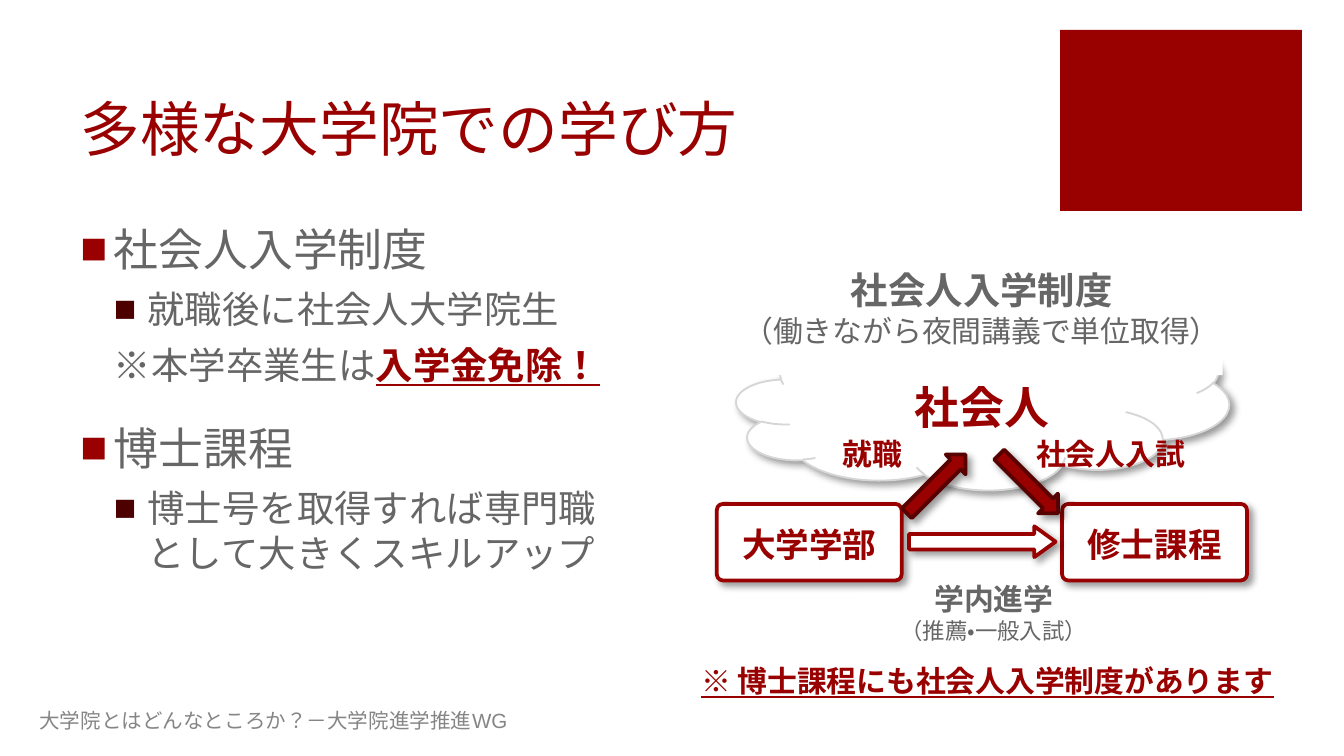
from lxml.etree import SubElement
from pptx import Presentation
from pptx.dml.color import RGBColor
from pptx.enum.lang import MSO_LANGUAGE_ID
from pptx.enum.shapes import MSO_SHAPE
from pptx.enum.text import MSO_ANCHOR, MSO_AUTO_SIZE, PP_ALIGN
from pptx.oxml import parse_xml
from pptx.oxml.ns import nsdecls, qn
from pptx.util import Pt

COLORS = {
    "red": "990000", "dark_red": "4C0000", "arrow_edge": "580101",
    "gray": "666666", "footer": "858585", "cloud_edge": "D6D6D6", "white": "FFFFFF",
}


def add_box(left, top, width, height, kind=None, fill=None, line=None, line_width=2,
            adjustments=(), shadow=False, rotation=0, insets=(7.2, 3.6, 7.2, 3.6),
            anchor=MSO_ANCHOR.MIDDLE, wrap=True):
    frame = [Pt(value) for value in (left, top, width, height)]
    if kind is None:
        shape = slide.shapes.add_textbox(*frame)
    else:
        shape = slide.shapes.add_shape(kind, *frame)
        shape.shadow.inherit = False
        shape.fill.solid()
        shape.fill.fore_color.rgb = RGBColor.from_string(COLORS[fill])
        shape.rotation = rotation
        for index, value in enumerate(adjustments):
            shape.adjustments[index] = value
        if line:
            shape.line.color.rgb = RGBColor.from_string(COLORS[line])
            shape.line.width = Pt(line_width)
        else:
            shape.line.fill.background()
    if shadow:
        shape._element.spPr.find(qn("a:effectLst")).append(parse_xml(
            f'<a:outerShdw {nsdecls("a")} blurRad="{Pt(4)}" dist="{Pt(3)}" dir="2700000" '
            'algn="tl" rotWithShape="0"><a:srgbClr val="000000"><a:alpha val="40000"/>'
            '</a:srgbClr></a:outerShdw>'))
    text_frame = shape.text_frame
    text_frame.word_wrap = wrap
    text_frame.vertical_anchor = anchor
    (text_frame.margin_left, text_frame.margin_top,
     text_frame.margin_right, text_frame.margin_bottom) = [Pt(inset) for inset in insets]
    return text_frame


def write(text_frame, text, size, color, bold=False, underline=False, font="Arial",
          align=PP_ALIGN.LEFT, before=0, margin=0, indent=0, bullet=None, level=0,
          same_paragraph=False):
    paragraph = text_frame.paragraphs[-1]
    if not same_paragraph:
        if paragraph.runs:
            paragraph = text_frame.add_paragraph()
        paragraph.alignment = align
        paragraph.space_before = Pt(before)
        paragraph.level = level
        properties = paragraph._p.get_or_add_pPr()
        properties.set("marL", str(Pt(margin)))
        properties.set("indent", str(Pt(indent)))
        if bullet:
            bullet_color = SubElement(properties, qn("a:buClr"))
            SubElement(bullet_color, qn("a:srgbClr"), val=COLORS[bullet])
            SubElement(properties, qn("a:buFont"), typeface="Arial")
            SubElement(properties, qn("a:buChar"), char="■")
        else:
            SubElement(properties, qn("a:buNone"))
    run = paragraph.add_run()
    run.text = text
    run.font.name = font
    run.font.language_id = MSO_LANGUAGE_ID.JAPANESE
    run.font.size = Pt(size)
    run.font.bold = bold
    run.font.underline = underline
    run.font.color.rgb = RGBColor.from_string(COLORS[color])


presentation = Presentation()
presentation.slide_width = Pt(720)
presentation.slide_height = Pt(405)
slide = presentation.slides.add_slide(presentation.slide_layouts[6])

add_box(568, 16, 129.5, 97, MSO_SHAPE.RECTANGLE, fill="red")

title = add_box(36, 34, 513, 57, anchor=MSO_ANCHOR.BOTTOM)
write(title, "多様な大学院での学び方", 32, "red")

body = add_box(36, 115, 302.5, 249, anchor=MSO_ANCHOR.TOP)
heading = dict(size=24, color="gray", before=18, margin=18, indent=-18, bullet="red")
detail = dict(size=20, color="gray", before=6, margin=36, indent=-18,
              bullet="dark_red", level=1)
write(body, "社会人入学制度", **heading)
write(body, "就職後に社会人大学院生", **detail)
write(body, "※本学卒業生は", 20, "gray", before=6, margin=18, level=1)
write(body, "入学金免除！", 20, "red", bold=True, underline=True, same_paragraph=True)
write(body, "博士課程", **heading)
write(body, "博士号を取得すれば専門職として大きくスキルアップ", **detail)

footer = add_box(14, 375, 473, 22)
write(footer, "大学院とはどんなところか？－大学院進学推進WG", 11, "footer")

add_box(394.5, 173.5, 264, 89, MSO_SHAPE.CLOUD_CALLOUT, fill="white", line="cloud_edge",
        line_width=1, adjustments=(-0.34, -0.31), shadow=True)

for left, stage in ((384, "大学学部"), (569, "修士課程")):
    stage_box = add_box(left, 270, 99, 41, MSO_SHAPE.ROUNDED_RECTANGLE, fill="white",
                        line="red", adjustments=(0.08,), shadow=True,
                        insets=(7, 6, 7, 3.6))
    write(stage_box, stage, 18, "red", bold=True, font="Quicksand", align=PP_ALIGN.CENTER)

add_box(487, 282, 78.5, 16.5, MSO_SHAPE.RIGHT_ARROW, fill="white", line="red",
        adjustments=(0.5, 0.69), shadow=True)

system = add_box(398, 123, 257, 78, MSO_SHAPE.RECTANGLE, fill="white",
                 insets=(6, 9, 7, 3), wrap=False)
write(system, "社会人入学制度", 20, "gray", bold=True, align=PP_ALIGN.CENTER)
write(system, "（働きながら夜間講義で単位取得）", 16, "gray", align=PP_ALIGN.CENTER)

for left, rotation in ((494, 45), (543.5, 135)):
    add_box(left, 237, 15, 44.5, MSO_SHAPE.UP_ARROW, fill="red", line="arrow_edge",
            shadow=True, rotation=rotation)

for left, top, width, height, text, size, color in (
    (443, 231, 50, 18, "就職", 16, "red"),
    (484.5, 192, 84, 45.5, "社会人", 24, "red"),
    (551, 231, 89, 18, "社会人入試", 16, "red"),
    (475, 306.5, 116, 37, "学内進学", 16, "gray"),
):
    label = add_box(left, top, width, height, insets=(0, 9, 1, 3), wrap=False)
    write(label, text, size, color, bold=True, align=PP_ALIGN.CENTER)
write(label, "（推薦・一般入試）", 12, "gray", align=PP_ALIGN.CENTER)

note = add_box(368.5, 351.5, 325.5, 26.5, anchor=MSO_ANCHOR.TOP)
note.auto_size = MSO_AUTO_SIZE.SHAPE_TO_FIT_TEXT
write(note, "※ 博士課程にも社会人入学制度があります", 16, "red", bold=True, underline=True,
      margin=21, indent=-21)

presentation.save("out.pptx")
